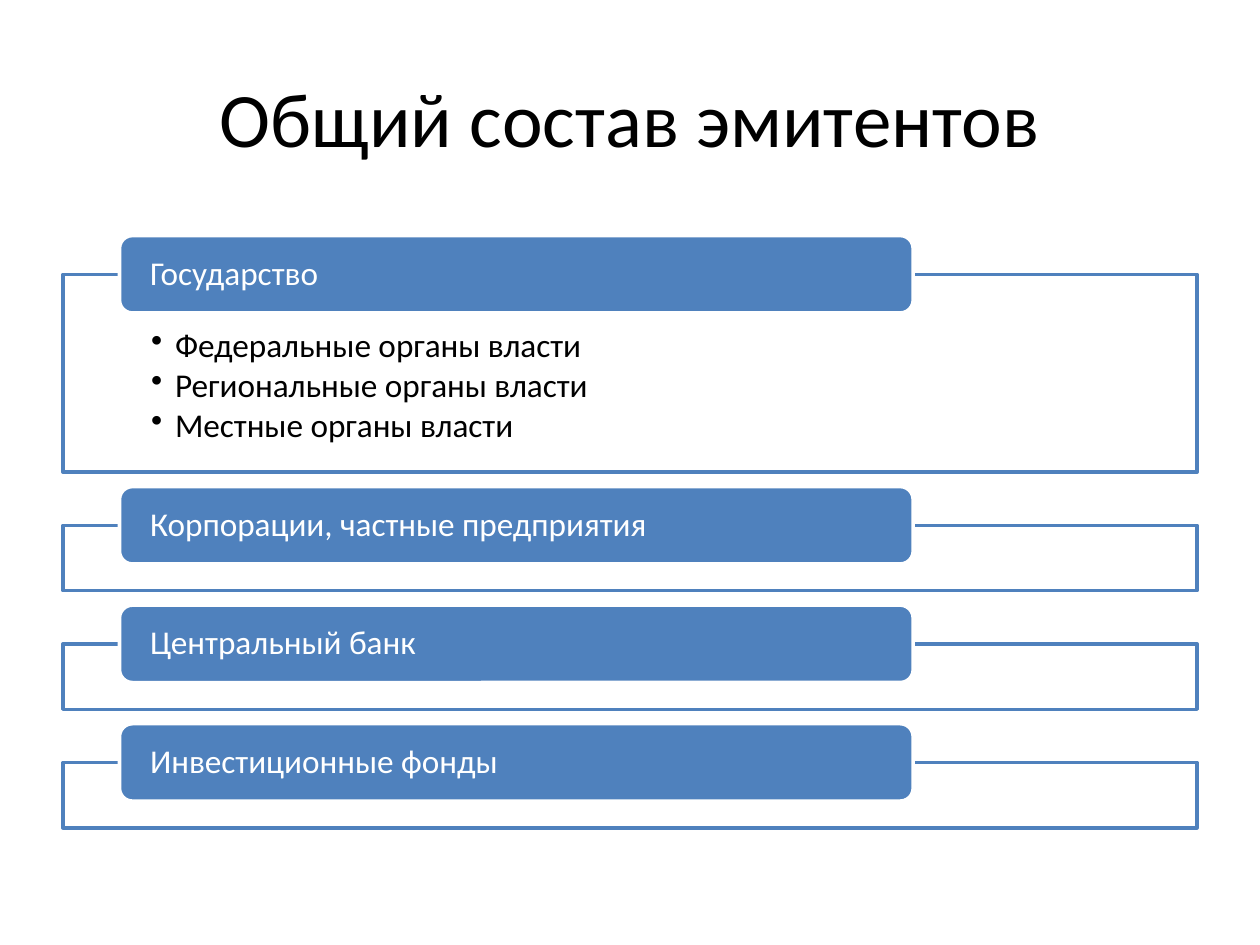
import pptx
import pptx.util
import pptx.dml.color
import pptx.enum.shapes
import pptx.enum.text
from lxml import etree

Cm, Pt = pptx.util.Cm, pptx.util.Pt
Kind = pptx.enum.shapes.MSO_SHAPE
Align = pptx.enum.text.PP_ALIGN
Anchor = pptx.enum.text.MSO_ANCHOR

TITLE = "Общий состав эмитентов"
GROUPS = [
    ("Государство", [
        "Федеральные органы власти",
        "Региональные органы власти",
        "Местные органы власти",
    ]),
    ("Корпорации, частные предприятия", []),
    ("Центральный банк", []),
    ("Инвестиционные фонды", []),
]

BLUE, WHITE, BLACK = "4F81BD", "FFFFFF", "000000"
LEFT, WIDTH = 1.27, 22.86
TAB_LEFT, TAB_WIDTH, TAB_HIGH = 2.41, 16, 1.56
TOP, GAP = 4.75, 0.29
BASE_HIGH, LIST_HIGH = 1.32, 3.99
HANG = 0.48

TAB_FRAME = dict(vertical_anchor=Anchor.MIDDLE, word_wrap=True,
                 margin_left=Cm(0.54), margin_right=Cm(0.54),
                 margin_top=0, margin_bottom=0)
LIST_FRAME = dict(vertical_anchor=Anchor.TOP, word_wrap=True,
                  margin_left=Cm(1.78), margin_right=Cm(1.78),
                  margin_top=Cm(1.09), margin_bottom=Cm(0.38))
TITLE_FRAME = dict(vertical_anchor=Anchor.MIDDLE, word_wrap=True)
TAB_PARA = dict(alignment=Align.LEFT, line_spacing=0.9)
LIST_PARA = dict(TAB_PARA, space_after=Pt(2.5))
TITLE_PARA = dict(alignment=Align.CENTER)


def paint(part, code):
    part.rgb = pptx.dml.color.RGBColor.from_string(code)


def assign(item, values):
    for name, value in values.items():
        setattr(item, name, value)


def write(shape, lines, frame, para, size, ink):
    box = shape.text_frame
    assign(box, frame)
    box.text = "\n".join(lines)
    for p in box.paragraphs:
        assign(p, para)
        for run in p.runs:
            assign(run.font, dict(name="Calibri", size=Pt(size)))
            paint(run.font.color, ink)


def block(slide, kind, place, fill, edge):
    shape = slide.shapes.add_shape(kind, *map(Cm, place))
    shape.shadow.inherit = False
    shape.fill.solid()
    paint(shape.fill.fore_color, fill)
    paint(shape.line.color, edge)
    shape.line.width = Pt(2)
    return shape


def bullet(p):
    props = p._p.get_or_add_pPr()
    props.set("marL", str(Cm(HANG)))
    props.set("indent", str(-Cm(HANG)))
    mark = etree.SubElement(props, pptx.oxml.ns.qn("a:buChar"))
    mark.set("char", "•")


def main():
    deck = pptx.Presentation()
    assign(deck, dict(slide_width=Cm(25.4), slide_height=Cm(19.05)))
    slide = deck.slides.add_slide(deck.slide_layouts[5])

    title = slide.shapes.title
    assign(title, dict(left=Cm(LEFT), top=Cm(0.76),
                       width=Cm(WIDTH), height=Cm(3.18)))
    write(title, [TITLE], TITLE_FRAME, TITLE_PARA, 44, BLACK)

    top = TOP
    for name, items in GROUPS:
        mid = top + TAB_HIGH / 2
        high = LIST_HIGH if items else BASE_HIGH
        panel = block(slide, Kind.RECTANGLE, (LEFT, mid, WIDTH, high),
                      WHITE, BLUE)
        if items:
            write(panel, items, LIST_FRAME, LIST_PARA, 19, BLACK)
            for p in panel.text_frame.paragraphs:
                bullet(p)
        tab = block(slide, Kind.ROUNDED_RECTANGLE,
                    (TAB_LEFT, top, TAB_WIDTH, TAB_HIGH), BLUE, WHITE)
        write(tab, [name], TAB_FRAME, TAB_PARA, 19, WHITE)
        top = mid + high + GAP

    deck.save("out.pptx")


if __name__ == "__main__":
    main()
